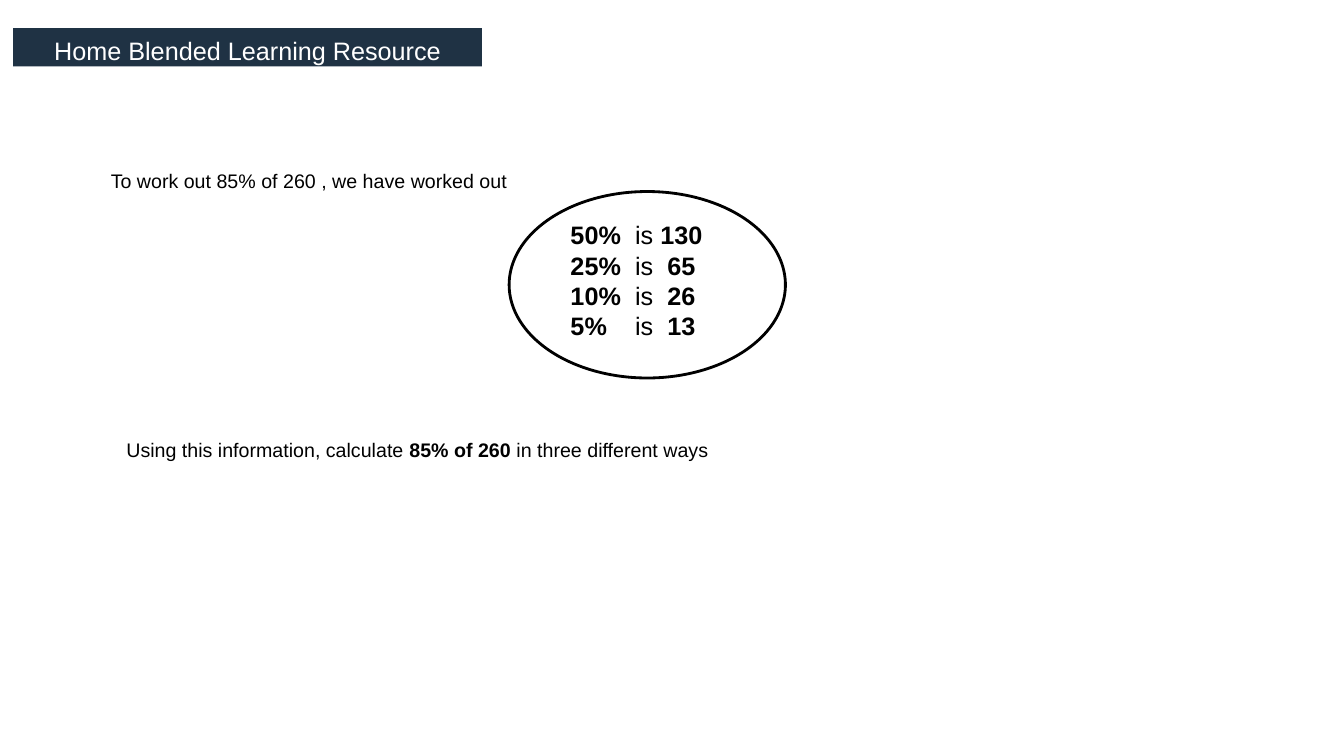
"""Build a slide asking for 85% of 260 from known percentages."""
from lxml import etree
from pptx import Presentation
from pptx.dml.color import RGBColor
from pptx.enum import shapes, text
from pptx.oxml import ns
from pptx.util import Inches, Pt

NAVY = RGBColor(0x1F, 0x32, 0x44)
WHITE = RGBColor(0xFF, 0xFF, 0xFF)
BLACK = RGBColor(0, 0, 0)


def style(para, size, color=BLACK):
    para.font.name = "Arial"
    para.font.size = Pt(size)
    para.font.color.rgb = color


def add_text(left, top, width, height, wrap=True):
    box = slide.shapes.add_textbox(Inches(left), Inches(top), Inches(width), Inches(height))
    box.text_frame.word_wrap = wrap
    return box.text_frame


deck = Presentation()
deck.slide_width, deck.slide_height = Inches(13.33), Inches(7.5)
slide = deck.slides.add_slide(deck.slide_layouts[6])

banner = slide.shapes.add_shape(
    shapes.MSO_SHAPE.RECTANGLE, Inches(0.13), Inches(0.28), Inches(4.65), Inches(0.38))
banner.shadow.inherit = False
banner.fill.solid()
banner.fill.fore_color.rgb = NAVY
banner.line.fill.background()
frame = banner.text_frame
frame.margin_top = Inches(0.1)
frame.vertical_anchor = text.MSO_ANCHOR.MIDDLE
para = frame.paragraphs[0]
para.text = "Home Blended Learning Resource"
para.alignment = text.PP_ALIGN.CENTER
style(para, 18, WHITE)

intro = add_text(1, 1.63, 4.15, 0.34, wrap=False).paragraphs[0]
intro.text = "To work out 85% of 260 , we have worked out"
style(intro, 14)

facts = add_text(5.56, 2.13, 1.52, 1.62)
rows = [("50%", "130"), ("25%", "65"), ("10%", "26"), ("5%", "13")]
for i, (share, value) in enumerate(rows):
    para = facts.paragraphs[0] if i == 0 else facts.add_paragraph()
    tabs = etree.SubElement(para._p.get_or_add_pPr(), ns.qn("a:tabLst"))
    for place, align in ((0.64, "l"), (1.1, "ctr")):
        etree.SubElement(tabs, ns.qn("a:tab"), pos=str(Inches(place)), algn=align)
    for part, bold in ((share, True), ("\tis\t", False), (value, True)):
        run = para.add_run()
        run.text = part
        run.font.bold = bold
    style(para, 18)

ring = slide.shapes.add_shape(
    shapes.MSO_SHAPE.OVAL, Inches(5.05), Inches(1.9), Inches(2.74), Inches(1.85))
ring.shadow.inherit = False
ring.fill.background()
ring.line.color.rgb = BLACK
ring.line.width = Pt(2)

task = add_text(0.74, 4.3, 6.8, 0.34).paragraphs[0]
task.alignment = text.PP_ALIGN.CENTER
for part, bold in (("Using this information, calculate ", False),
                   ("85% of 260 ", True),
                   ("in three different ways", False)):
    run = task.add_run()
    run.text = part
    run.font.bold = bold
style(task, 14)

deck.save("out.pptx")
